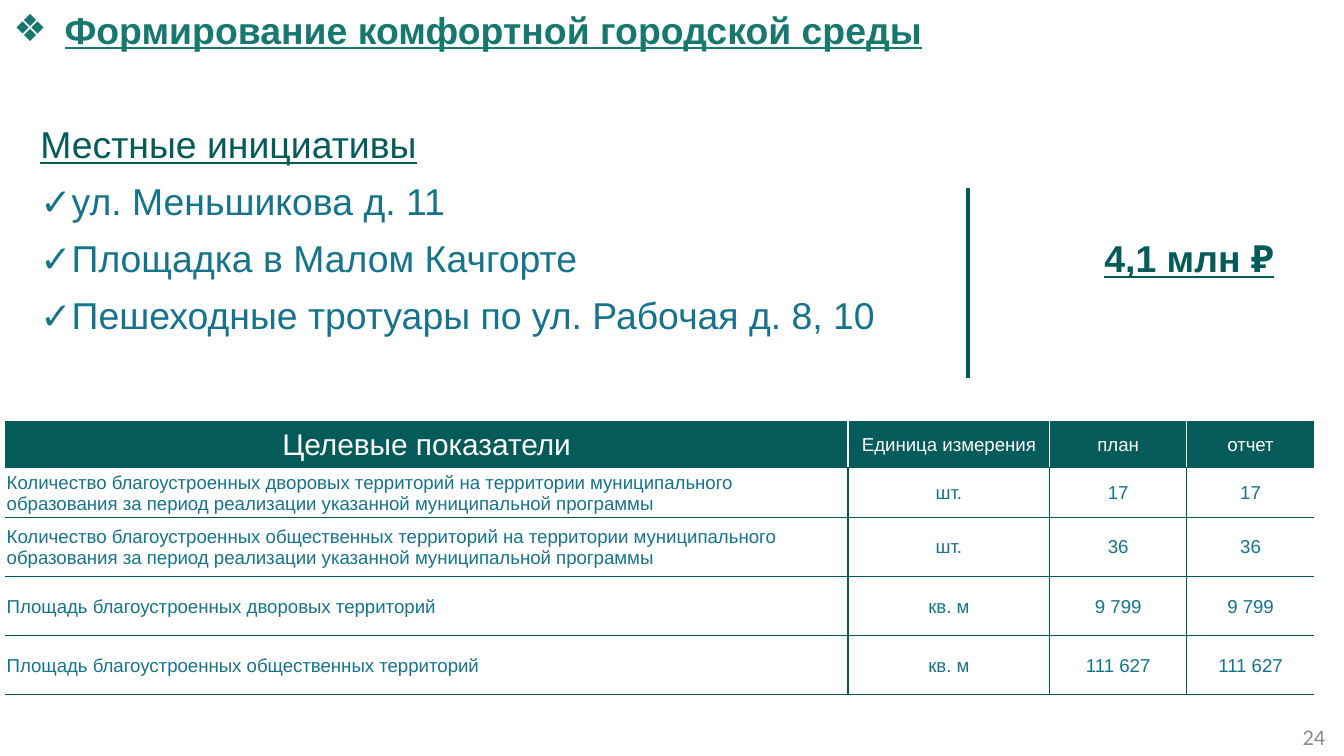
from lxml import etree
from pptx import Presentation
from pptx.dml.color import RGBColor
from pptx.enum.shapes import MSO_CONNECTOR
from pptx.enum.text import MSO_ANCHOR, MSO_AUTO_SIZE, PP_ALIGN
from pptx.oxml.ns import qn
from pptx.util import Inches, Pt

LEFT, CENTER, RIGHT = PP_ALIGN.LEFT, PP_ALIGN.CENTER, PP_ALIGN.RIGHT
TOP, MIDDLE = MSO_ANCHOR.TOP, MSO_ANCHOR.MIDDLE
NO_GRID = "{2D5ABB26-0587-4C30-8999-92F81FD0307C}"

COLORS = {"dark": "055A5A", "text": "16738C", "title": "16786E",
          "white": "FFFFFF", "gray": "8C8C8C"}

TITLE = "Формирование комфортной городской среды"
HEAD = "Местные инициативы"
SITES = ["ул. Меньшикова д. 11",
         "Площадка в Малом Качгорте",
         "Пешеходные тротуары по ул. Рабочая д. 8, 10"]
COST, COST_ROW = "4,1 млн ₽", 1
GOALS = [
    ("Целевые показатели", "Единица измерения", "план", "отчет"),
    ("Количество благоустроенных дворовых территорий на территории "
     "муниципального образования за период реализации указанной "
     "муниципальной программы", "шт.", "17", "17"),
    ("Количество благоустроенных общественных территорий на территории "
     "муниципального образования за период реализации указанной "
     "муниципальной программы", "шт.", "36", "36"),
    ("Площадь благоустроенных дворовых территорий",
     "кв. м", "9 799", "9 799"),
    ("Площадь благоустроенных общественных территорий",
     "кв. м", "111 627", "111 627"),
]
PAGE = "24"

WIDTHS = [6.27, 1.5, 1.02, 0.95]
HEIGHTS = [0.35, 0.37, 0.44, 0.44, 0.44]
LINE_H = 0.41


def color(name):
    return RGBColor.from_string(COLORS[name])


def style(run, size, tint, bold=False, under=False, face="Arial"):
    font = run.font
    font.name, font.size = face, Pt(size)
    font.bold, font.underline = bold, under
    font.color.rgb = color(tint)


def bullet(para, char, indent, tab=None):
    """Hang the paragraph on a bullet, with an optional right tab stop."""
    props = para._p.get_or_add_pPr()
    props.set("marL", str(Inches(indent)))
    props.set("indent", str(-Inches(indent)))
    etree.SubElement(props, qn("a:buFont"), typeface="Arial")
    etree.SubElement(props, qn("a:buChar"), char=char)
    if tab:
        tabs = etree.SubElement(props, qn("a:tabLst"))
        etree.SubElement(tabs, qn("a:tab"), pos=str(Inches(tab)), algn="r")


def border(cell, sides):
    """Draw 1 pt cell borders; sides maps lnL, lnR, lnT, lnB to a color."""
    props = cell._tc.get_or_add_tcPr()
    spot = 0
    for side in ("lnL", "lnR", "lnT", "lnB"):
        if side in sides:
            line = etree.Element(qn("a:" + side), w=str(Pt(1)))
            fill = etree.SubElement(line, qn("a:solidFill"))
            etree.SubElement(fill, qn("a:srgbClr"), val=COLORS[sides[side]])
            props.insert(spot, line)
            spot += 1


def add_grid(slide, left, top, widths, heights):
    """Add a table without banding, fills or grid lines."""
    table = slide.shapes.add_table(
        len(heights), len(widths), Inches(left), Inches(top),
        Inches(sum(widths)), Inches(sum(heights))).table
    table.first_row = table.horz_banding = False
    table._tbl.tblPr.find(qn("a:tableStyleId")).text = NO_GRID
    for col, width in zip(table.columns, widths):
        col.width = Inches(width)
    for row, height in zip(table.rows, heights):
        row.height = Inches(height)
    for cell in table.iter_cells():
        cell.fill.background()
    return table


def add_title(slide):
    title = slide.shapes.title
    title.left = title.top = 0
    title.width, title.height = Inches(10), Inches(0.44)
    frame = title.text_frame
    frame.text = TITLE
    frame.vertical_anchor = TOP
    frame.auto_size = MSO_AUTO_SIZE.NONE
    para = frame.paragraphs[0]
    para.alignment = LEFT
    bullet(para, "❖", 0.38)
    style(para.runs[0], 20, "title", True, True)


def add_sites(slide):
    table = add_grid(slide, 0.2, 0.88, [9.61], [LINE_H] * (len(SITES) + 1))
    for cell in table.iter_cells():
        cell.margin_bottom = Inches(0.04)
    head = table.cell(0, 0).text_frame.paragraphs[0]
    head.text = HEAD
    style(head.runs[0], 20, "dark", under=True)
    for i, site in enumerate(SITES):
        para = table.cell(i + 1, 0).text_frame.paragraphs[0]
        has_cost = i == COST_ROW
        bullet(para, "✓", 0.23, 9.38 if has_cost else None)
        run = para.add_run()
        run.text = site + ("\t" if has_cost else "")
        style(run, 20, "text")
        if has_cost:
            run = para.add_run()
            run.text = COST
            style(run, 20, "dark", True, True)


def add_goals(slide):
    table = add_grid(slide, 0.04, 3.13, WIDTHS, HEIGHTS)
    last = len(WIDTHS) - 1
    for r, row in enumerate(GOALS):
        for c, text in enumerate(row):
            cell = table.cell(r, c)
            cell.margin_left = cell.margin_right = Inches(0.01)
            cell.margin_top, cell.margin_bottom = Inches(0.01), 0
            cell.vertical_anchor = MIDDLE
            para = cell.text_frame.paragraphs[0]
            para.text = text
            para.alignment = LEFT if r and not c else CENTER
            style(para.runs[0], 10 if r or c else 16,
                  "text" if r else "white")
            tint = "dark" if r else "white"
            sides = {"lnB": "dark"}
            if r:
                sides["lnT"] = "dark"
            else:
                cell.fill.solid()
                cell.fill.fore_color.rgb = color("dark")
            if c:
                sides["lnL"] = tint
            if c < last:
                sides["lnR"] = tint
            border(cell, sides)


def add_rule(slide):
    x = Inches(7.2)
    rule = slide.shapes.add_connector(
        MSO_CONNECTOR.STRAIGHT, x, Inches(1.4), x, Inches(2.81))
    rule.line.color.rgb = color("dark")
    rule.line.width = Pt(2.25)
    etree.SubElement(rule._element.spPr, qn("a:effectLst"))


def add_page(slide):
    box = slide.shapes.add_textbox(
        Inches(7.63), Inches(5.33), Inches(2.33), Inches(0.3))
    frame = box.text_frame
    frame.word_wrap = True
    frame.vertical_anchor = MIDDLE
    frame.text = PAGE
    para = frame.paragraphs[0]
    para.alignment = RIGHT
    style(para.runs[0], 12, "gray", face="Calibri")


def main():
    deck = Presentation()
    deck.slide_width = Inches(10)
    deck.slide_height = deck.slide_width * 9 // 16
    slide = deck.slides.add_slide(deck.slide_layouts[5])
    for add in (add_page, add_goals, add_sites, add_title, add_rule):
        add(slide)
    deck.save("out.pptx")


if __name__ == "__main__":
    main()
